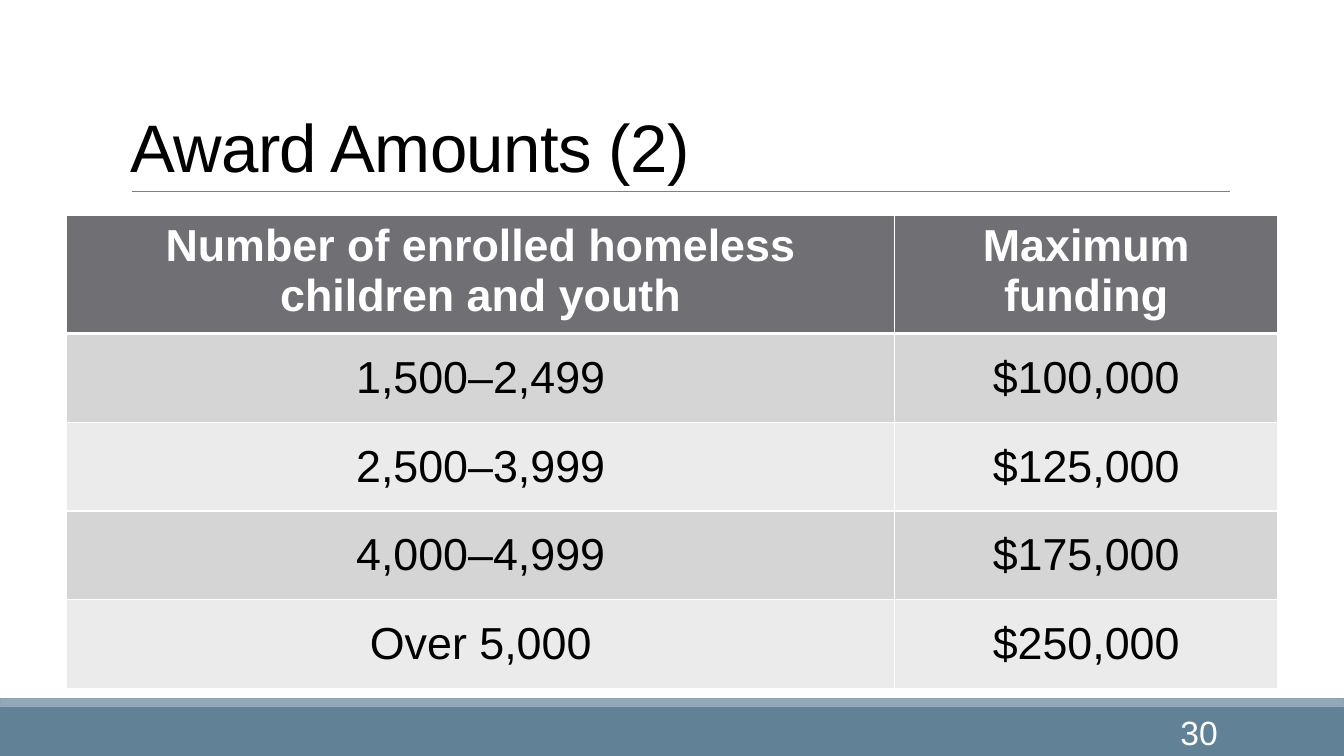
"""Build the award amounts slide with its funding table."""
from lxml.etree import SubElement
from pptx import Presentation
from pptx.dml.color import RGBColor
from pptx.enum.shapes import MSO_CONNECTOR, MSO_SHAPE
from pptx.enum.text import MSO_ANCHOR, PP_ALIGN
from pptx.oxml.ns import qn
from pptx.util import Pt

TITLE = "Award Amounts (2)"
PAGE_NUMBER = "30"
AWARDS = [
    ("Number of enrolled homeless children and youth", "Maximum funding"),
    ("1,500–2,499", "$100,000"),
    ("2,500–3,999", "$125,000"),
    ("4,000–4,999", "$175,000"),
    ("Over 5,000", "$250,000"),
]

FONT = "Arial"
BLACK = RGBColor(0x00, 0x00, 0x00)
WHITE = RGBColor(0xFF, 0xFF, 0xFF)
FOOTER_BLUE = RGBColor(0x61, 0x81, 0x97)
STRIPE_BLUE = RGBColor(0x92, 0xA9, 0xB9)
STRIPE_EDGE = RGBColor(0x8F, 0xA3, 0xB6)
RULE_GRAY = RGBColor(0x80, 0x80, 0x80)
HEADER_GRAY = RGBColor(0x6F, 0x6F, 0x74)
BAND_GRAYS = [RGBColor(0xEB, 0xEB, 0xEB), RGBColor(0xD5, 0xD5, 0xD6)]

SLIDE_WIDTH, SLIDE_HEIGHT = 960, 540
TABLE_LEFT, TABLE_TOP = 47.7, 154.2
COLUMN_WIDTHS = [591.5, 273.5]
HEADER_HEIGHT, ROW_HEIGHT = 84, 63.4


def write_text(frame, text, size=32, color=BLACK, bold=False,
               align=PP_ALIGN.LEFT, line_spacing=None, tracking=None):
    frame.word_wrap = True
    paragraph = frame.paragraphs[0]
    paragraph.alignment = align
    if line_spacing:
        paragraph.line_spacing = line_spacing
    run = paragraph.add_run()
    run.text = text
    run.font.name = FONT
    run.font.size = Pt(size)
    run.font.bold = bold
    run.font.color.rgb = color
    if tracking:
        run.font._element.set("spc", str(int(tracking * 100)))


def add_text(slide, text, left, top, width, height, anchor, **text_format):
    frame = slide.shapes.add_textbox(Pt(left), Pt(top), Pt(width), Pt(height)).text_frame
    frame.vertical_anchor = anchor
    write_text(frame, text, **text_format)


def add_bar(slide, top, height, color, edge=None):
    bar = slide.shapes.add_shape(MSO_SHAPE.RECTANGLE, 0, Pt(top), Pt(SLIDE_WIDTH), Pt(height))
    bar.shadow.inherit = False
    bar.fill.solid()
    bar.fill.fore_color.rgb = color
    if edge:
        bar.line.color.rgb = edge
        bar.line.width = Pt(1.25)
    else:
        bar.line.fill.background()


def add_rule(slide, left, right, y):
    rule = slide.shapes.add_connector(MSO_CONNECTOR.STRAIGHT, Pt(left), Pt(y), Pt(right), Pt(y))
    rule.line.color.rgb = RULE_GRAY
    rule.line.width = Pt(0.5)
    SubElement(rule._element.spPr, qn("a:effectLst"))


def set_borders(cell, **widths):
    properties = cell._tc.get_or_add_tcPr()
    for side, width in widths.items():
        border = SubElement(properties, qn(f"a:ln{side}"), w=str(Pt(width)))
        fill = SubElement(border, qn("a:solidFill"))
        SubElement(fill, qn("a:srgbClr"), val=str(WHITE))


def add_awards(slide):
    heights = [HEADER_HEIGHT] + [ROW_HEIGHT] * (len(AWARDS) - 1)
    table = slide.shapes.add_table(
        len(AWARDS), len(COLUMN_WIDTHS), Pt(TABLE_LEFT), Pt(TABLE_TOP),
        Pt(sum(COLUMN_WIDTHS)), Pt(sum(heights))).table
    for column, width in zip(table.columns, COLUMN_WIDTHS):
        column.width = Pt(width)
    for row_index, (award, height) in enumerate(zip(AWARDS, heights)):
        table.rows[row_index].height = Pt(height)
        header = row_index == 0
        for column_index, text in enumerate(award):
            cell = table.cell(row_index, column_index)
            cell.vertical_anchor = MSO_ANCHOR.TOP if header else MSO_ANCHOR.MIDDLE
            set_borders(cell, L=1, R=1, T=3 if row_index == 1 else 1, B=3 if header else 1)
            cell.fill.solid()
            cell.fill.fore_color.rgb = HEADER_GRAY if header else BAND_GRAYS[row_index % 2]
            write_text(cell.text_frame, text, color=WHITE if header else BLACK,
                       bold=header, align=PP_ALIGN.CENTER)


def main():
    deck = Presentation()
    deck.slide_width, deck.slide_height = Pt(SLIDE_WIDTH), Pt(SLIDE_HEIGHT)
    slide = deck.slides.add_slide(deck.slide_layouts[6])
    add_bar(slide, 504.6, 35.4, FOOTER_BLUE)
    add_bar(slide, 499, 5, STRIPE_BLUE, edge=STRIPE_EDGE)
    add_rule(slide, 94, 878.5, 136.6)
    add_text(slide, TITLE, 86.4, 22.6, 792, 114.2, MSO_ANCHOR.BOTTOM,
             size=48, line_spacing=0.85, tracking=-0.5)
    add_awards(slide)
    add_text(slide, PAGE_NUMBER, 773.3, 508.5, 103.7, 28.8, MSO_ANCHOR.MIDDLE,
             size=24, color=WHITE, align=PP_ALIGN.RIGHT)
    deck.save("out.pptx")


if __name__ == "__main__":
    main()
